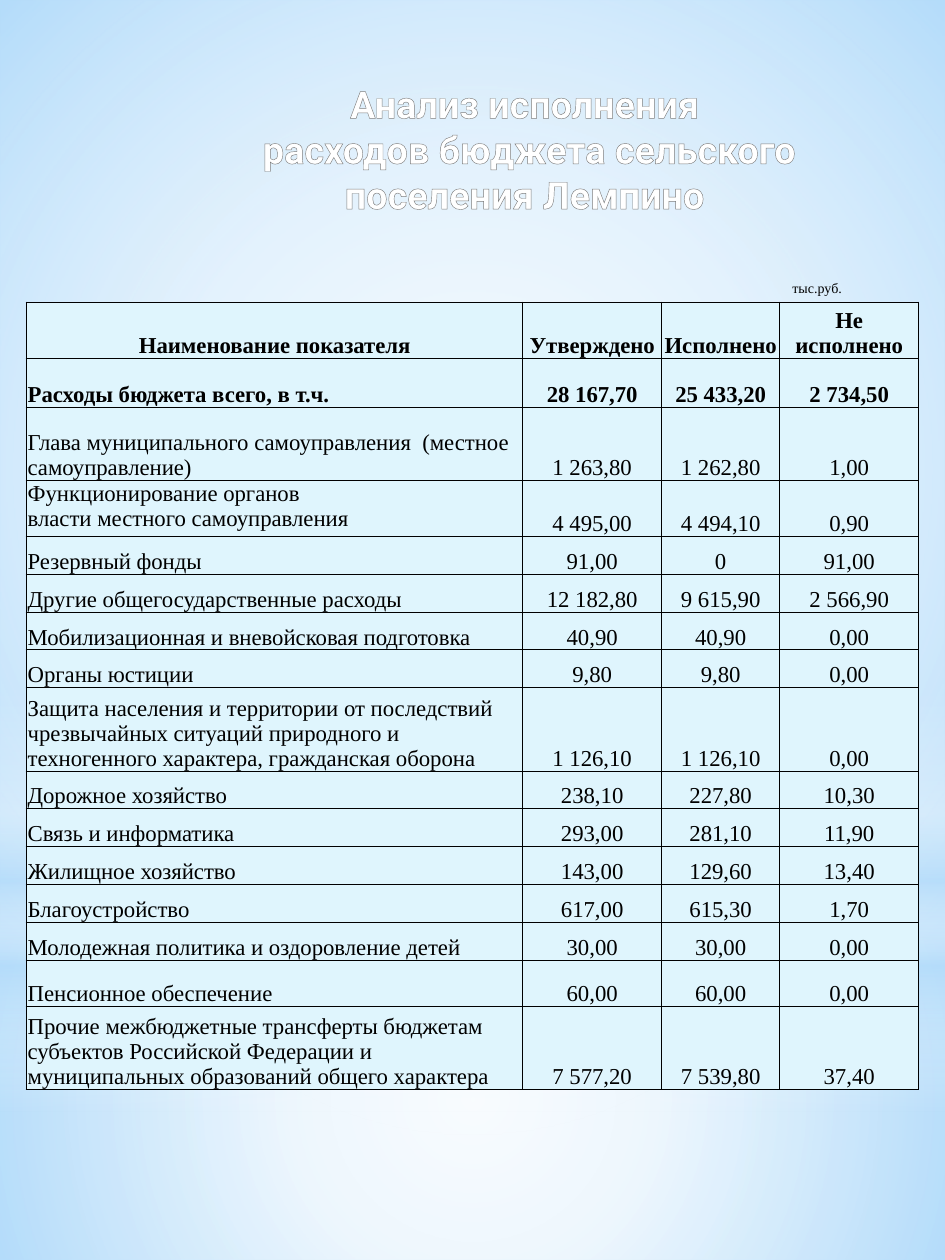
from lxml import etree
from pptx import Presentation
from pptx.dml.color import RGBColor
from pptx.enum.shapes import MSO_SHAPE as Shape
from pptx.enum.text import MSO_ANCHOR as Anchor, PP_ALIGN as Align
from pptx.oxml import parse_xml
from pptx.oxml.ns import nsdecls, qn
from pptx.util import Inches, Pt

COLORS = {
    "sky": "B4DCFA",
    "white": "FFFFFF",
    "cell": "DFF5FD",
    "ink": "000000",
    "outline": "7D7D7D",
}
SERIF = "Times New Roman"
TITLE_FONT = "Roboto"

CIRCLE = '<a:path path="circle"><a:fillToRect l="50000" t="50000" r="50000" b="50000"/></a:path>'
DOWNWARD = '<a:lin ang="5400000" scaled="0"/>'
BACKDROP = [
    (Shape.RECTANGLE, (0, 7.44, 7.5, 2.56), CIRCLE,
     [(0, "white", 91), (37, "white", 76), (100, "sky", 79)]),
    (Shape.RECTANGLE, (0, 0, 7.5, 7.44), CIRCLE,
     [(0, "white", 89), (48, "white", 62), (100, "sky", 79)]),
    (Shape.RECTANGLE, (0, 5.49, 7.5, 3.33), DOWNWARD,
     [(0, "white", 0), (29, "white", 30), (45, "sky", 40),
      (55, "white", 26), (65, "sky", 60), (100, "white", 0)]),
    (Shape.OVAL, (0, 2.33, 7.5, 7.44), CIRCLE,
     [(0, "white", 100), (56, "white", 0)]),
]

TITLE_LINES = ["Анализ исполнения", " расходов бюджета сельского поселения Лемпино"]
COLUMN_WIDTHS = [3.94, 1.1, 0.94, 1.1]
BUDGET_ROWS = [
    (0.44, "Наименование показателя", "Утверждено", "Исполнено", "Не исполнено"),
    (0.39, "Расходы бюджета всего, в т.ч.", "28 167,70", "25 433,20", "2 734,50"),
    (0.58, "Глава муниципального самоуправления  (местное самоуправление)",
     "1 263,80", "1 262,80", "1,00"),
    (0.44, "Функционирование органов \nвласти местного самоуправления",
     "4 495,00", "4 494,10", "0,90"),
    (0.3, "Резервный фонды", "91,00", "0", "91,00"),
    (0.3, "Другие общегосударственные расходы", "12 182,80", "9 615,90", "2 566,90"),
    (0.3, "Мобилизационная и вневойсковая подготовка", "40,90", "40,90", "0,00"),
    (0.3, "Органы юстиции", "9,80", "9,80", "0,00"),
    (0.66, "Защита населения и территории от последствий чрезвычайных ситуаций "
     "природного и техногенного характера, гражданская оборона",
     "1 126,10", "1 126,10", "0,00"),
    (0.3, "Дорожное хозяйство", "238,10", "227,80", "10,30"),
    (0.3, "Связь и информатика", "293,00", "281,10", "11,90"),
    (0.3, "Жилищное хозяйство", "143,00", "129,60", "13,40"),
    (0.3, "Благоустройство", "617,00", "615,30", "1,70"),
    (0.3, "Молодежная политика и оздоровление детей", "30,00", "30,00", "0,00"),
    (0.37, "Пенсионное обеспечение", "60,00", "60,00", "0,00"),
    (0.66, "Прочие межбюджетные трансферты бюджетам субъектов Российской Федерации "
     "и муниципальных образований общего характера",
     "7 577,20", "7 539,80", "37,40"),
]


def rgb(name):
    return RGBColor.from_string(COLORS[name])


def add_run(paragraph, text, font, size, color, bold=False):
    run = paragraph.add_run()
    run.text = text
    run.font.name = font
    run.font.size = Pt(size)
    run.font.bold = bold
    run.font.color.rgb = rgb(color)
    return run


def add_backdrop(slide):
    fill = slide.background.fill
    fill.solid()
    fill.fore_color.rgb = rgb("sky")
    for kind, box, direction, stops in BACKDROP:
        shape = slide.shapes.add_shape(kind, *map(Inches, box))
        shape.shadow.inherit = False
        shape.line.fill.background()
        stop_xml = "".join(
            f'<a:gs pos="{position * 1000}"><a:srgbClr val="{COLORS[color]}">'
            f'<a:alpha val="{alpha * 1000}"/></a:srgbClr></a:gs>'
            for position, color, alpha in stops)
        gradient = parse_xml(
            f'<a:gradFill {nsdecls("a")} rotWithShape="1">'
            f'<a:gsLst>{stop_xml}</a:gsLst>{direction}</a:gradFill>')
        shape.element.spPr.find(qn("a:prstGeom")).addnext(gradient)


def add_title(slide, box):
    title = slide.shapes.title
    title.left, title.top, title.width, title.height = map(Inches, box)
    slide.shapes.element.append(title.element)
    frame = title.text_frame
    frame.word_wrap = True
    frame.vertical_anchor = Anchor.TOP
    for index, text in enumerate(TITLE_LINES):
        paragraph = frame.add_paragraph() if index else frame.paragraphs[0]
        paragraph.alignment = Align.CENTER
        paragraph.space_before = Pt(0)
        run = add_run(paragraph, text, TITLE_FONT, 21.6, "white", True)
        properties = run.font.fill._xPr
        properties.insert(0, parse_xml(
            f'<a:ln {nsdecls("a")} w="{Pt(0.83)}"><a:solidFill>'
            f'<a:srgbClr val="{COLORS["outline"]}"/></a:solidFill></a:ln>'))


def add_unit_label(slide, box):
    frame = slide.shapes.add_textbox(*map(Inches, box)).text_frame
    frame.word_wrap = True
    add_run(frame.paragraphs[0], "тыс.руб.", SERIF, 8, "ink")


def set_borders(cell, widths):
    properties = cell._tc.get_or_add_tcPr()
    for index, (side, width) in enumerate(widths.items()):
        line = etree.Element(qn(f"a:ln{side}"), w=str(Pt(width)))
        fill = etree.SubElement(line, qn("a:solidFill"))
        etree.SubElement(fill, qn("a:srgbClr"), val=COLORS["ink"])
        properties.insert(index, line)


def fill_cell(cell, text, row, column):
    cell.fill.solid()
    cell.fill.fore_color.rgb = rgb("cell")
    cell.margin_left = cell.margin_right = cell.margin_top = Inches(0.01)
    cell.margin_bottom = 0
    cell.vertical_anchor = Anchor.TOP if "\n" in text else Anchor.BOTTOM
    paragraph = cell.text_frame.paragraphs[0]
    paragraph.alignment = Align.CENTER if row == 0 or column else Align.LEFT
    for index, part in enumerate(text.split("\n")):
        if index:
            paragraph.add_line_break()
        add_run(paragraph, part, SERIF, 13, "ink", row < 2)
    set_borders(cell, {
        "L": 1 if column == 0 else 0.5,
        "R": 1 if column == len(COLUMN_WIDTHS) - 1 else 0.5,
        "T": 1 if row == 0 else 0.5,
        "B": 0.5,
    })


def add_budget_table(slide, box):
    table = slide.shapes.add_table(
        len(BUDGET_ROWS), len(COLUMN_WIDTHS), *map(Inches, box)).table
    table.first_row = table.horz_banding = False
    for column, width in zip(table.columns, COLUMN_WIDTHS):
        column.width = Inches(width)
    for row, (height, *texts) in enumerate(BUDGET_ROWS):
        table.rows[row].height = Inches(height)
        for column, text in enumerate(texts):
            fill_cell(table.cell(row, column), text, row, column)


def main():
    presentation = Presentation()
    presentation.slide_width = Inches(7.5)
    presentation.slide_height = Inches(10)
    slide = presentation.slides.add_slide(presentation.slide_layouts[5])
    add_backdrop(slide)
    add_title(slide, (1.23, 0.59, 5.87, 1.19))
    add_unit_label(slide, (6.19, 2.17, 0.92, 0.24))
    add_budget_table(slide, (0.21, 2.4, 7.09, 6.25))
    presentation.save("out.pptx")


if __name__ == "__main__":
    main()
